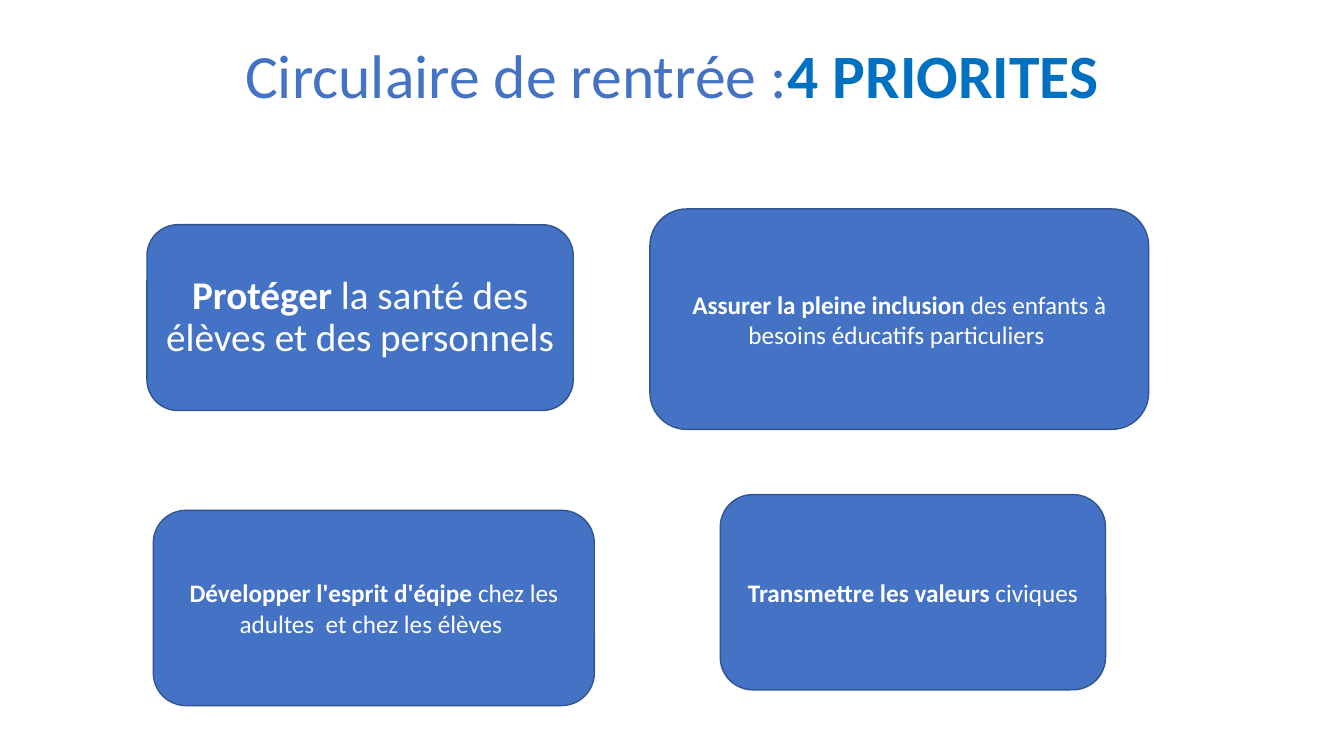
from pptx import Presentation
from pptx.dml.color import RGBColor
from pptx.enum.shapes import MSO_SHAPE
from pptx.enum.text import MSO_ANCHOR, MSO_AUTO_SIZE, PP_ALIGN
from pptx.util import Emu, Pt

ROUNDED = MSO_SHAPE.ROUNDED_RECTANGLE
TOP, MIDDLE = MSO_ANCHOR.TOP, MSO_ANCHOR.MIDDLE
CENTER = PP_ALIGN.CENTER
NO_FIT = MSO_AUTO_SIZE.NONE

BLUE = RGBColor(0x44, 0x72, 0xC4)
DARK_BLUE = RGBColor(0x32, 0x54, 0x91)
ACCENT = RGBColor(0x00, 0x70, 0xC0)
WHITE = RGBColor(0xFF, 0xFF, 0xFF)
FONT = "Calibri"

PRIORITIES = [
    ((140, 214, 406, 177), 28, 0.9, "Protéger", " la santé des élèves et des personnels "),
    ((146, 486, 420, 186), 18, 1.0, "Développer l'esprit d'éqipe ", "chez les adultes  et chez les élèves "),
    ((686, 471, 367, 186), 18, 1.0, "Transmettre les valeurs", " civiques"),
    ((619, 199, 475, 210), 18, 1.0, "Assurer la pleine inclusion", " des enfants à besoins éducatifs particuliers "),
]


def px(length):
    return Emu(length * 9525)


def write_text(shape, anchor, size, spacing, runs):
    frame = shape.text_frame
    frame.word_wrap = True
    frame.auto_size = NO_FIT
    frame.vertical_anchor = anchor
    paragraph = frame.paragraphs[0]
    paragraph.alignment = CENTER
    paragraph.line_spacing = spacing
    paragraph.font.name = FONT
    paragraph.font.size = Pt(size)
    for text, color, bold in runs:
        run = paragraph.add_run()
        run.text = text
        run.font.color.rgb = color
        run.font.bold = bold


def add_title(slide):
    title = slide.shapes.title
    title.left, title.top, title.width, title.height = map(px, (88, 38, 1104, 139))
    write_text(title, TOP, 44, 0.9, [
        ("Circulaire de rentrée :", BLUE, False),
        ("4 PRIORITES", ACCENT, True),
    ])


def add_priority(slide, box, size, spacing, key_words, rest):
    shape = slide.shapes.add_shape(ROUNDED, *map(px, box))
    shape.shadow.inherit = False
    shape.fill.solid()
    shape.fill.fore_color.rgb = BLUE
    shape.line.color.rgb = DARK_BLUE
    shape.line.width = Pt(1)
    write_text(shape, MIDDLE, size, spacing, [
        (key_words, WHITE, True),
        (rest, WHITE, False),
    ])


def main():
    presentation = Presentation()
    presentation.slide_width = px(1280)
    presentation.slide_height = px(720)
    slide = presentation.slides.add_slide(presentation.slide_layouts[5])
    add_title(slide)
    for priority in PRIORITIES:
        add_priority(slide, *priority)
    presentation.save("out.pptx")


if __name__ == "__main__":
    main()
